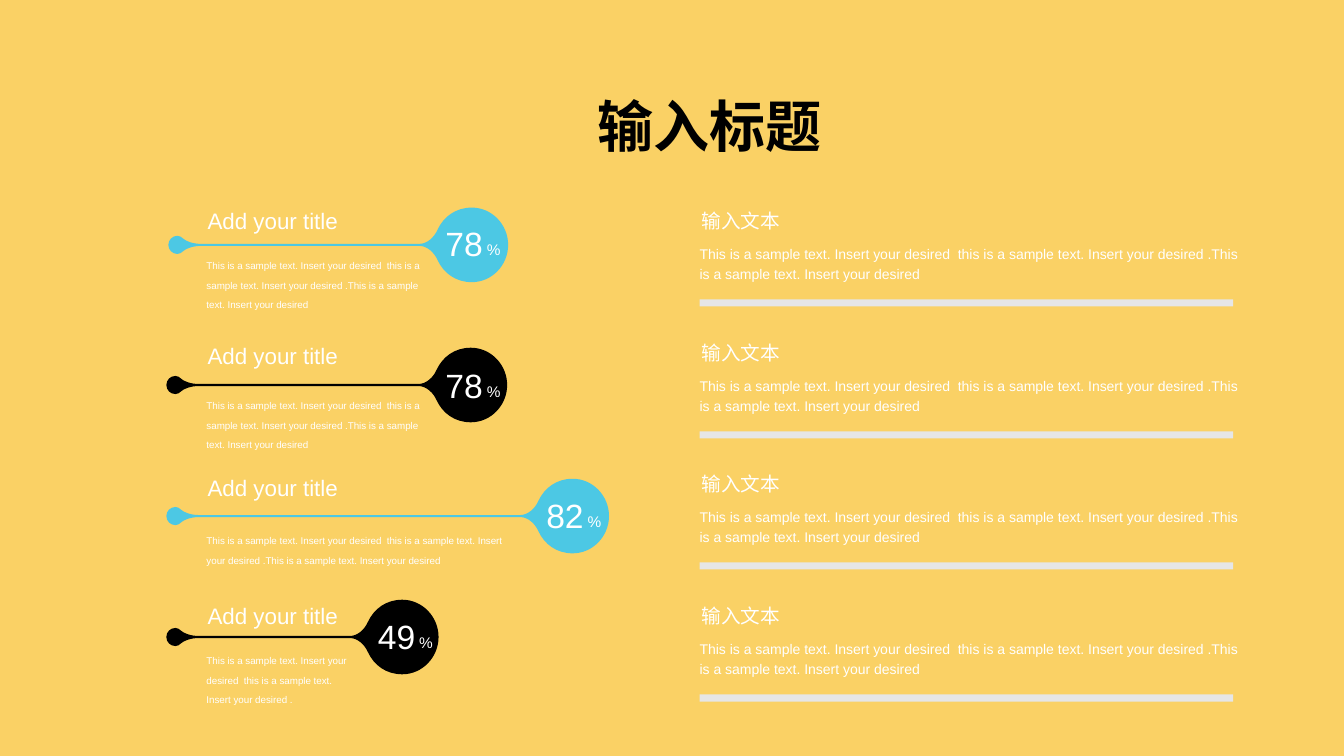
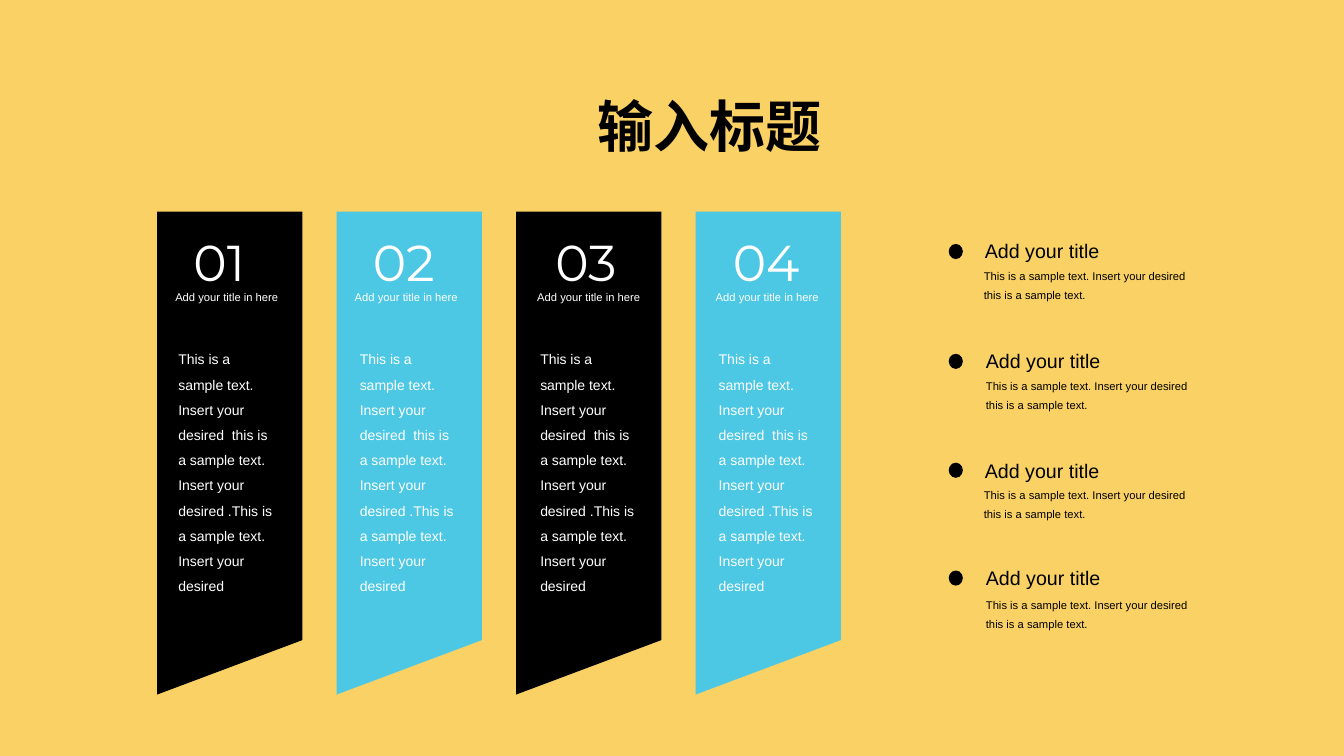
from lxml.etree import SubElement
from pptx import Presentation
from pptx.dml.color import RGBColor
from pptx.enum.shapes import MSO_SHAPE as Shape
from pptx.enum.text import MSO_ANCHOR as Anchor, MSO_AUTO_SIZE as Auto, PP_ALIGN as Align
from pptx.oxml.ns import qn
from pptx.util import Inches, Pt

GOLD = RGBColor(0xFA, 0xD1, 0x65)
BLUE = RGBColor(0x4C, 0xC8, 0xE4)
BLACK = RGBColor(0, 0, 0)
WHITE = RGBColor(255, 255, 255)
GREY = RGBColor(0xE6, 0xE6, 0xE6)
HEAD = "Add your title"
SHORT = "This is a sample text. Insert your desired  this is a sample text."
MID = SHORT + " Insert your desired ."
LONG = MID + "This is a sample text. Insert your desired"


def paint(shape, color):
    shape.shadow.inherit = False
    shape.fill.solid()
    shape.fill.fore_color.rgb = color
    shape.line.fill.background()


def write(slide, box, text, size, color, lead=None, font="Arial", fill=None):
    place = [Inches(n) for n in box]
    if fill is None:
        shape = slide.shapes.add_textbox(*place)
    else:
        shape = slide.shapes.add_shape(Shape.RECTANGLE, *place)
        paint(shape, fill)
    frame = shape.text_frame
    frame.word_wrap = lead is not None
    frame.auto_size = Auto.SHAPE_TO_FIT_TEXT
    frame.vertical_anchor = Anchor.TOP
    para = frame.paragraphs[0]
    para.alignment = Align.LEFT
    if lead:
        para.line_spacing = Pt(lead)
    run = para.add_run()
    run.text = text
    run.font.name = font
    run.font.size = Pt(size)
    run.font.color.rgb = color


deck = Presentation()
deck.slide_width = Inches(13.33)
deck.slide_height = Inches(7.5)

slides = []
for _ in range(2):
    slide = deck.slides.add_slide(deck.slide_layouts[5])
    back = slide.shapes.add_shape(
        Shape.RECTANGLE, 0, 0, deck.slide_width, deck.slide_height)
    paint(back, GOLD)
    back.line.color.rgb = GOLD
    back.line.width = Pt(1)
    title = slide.shapes.title
    back._element.addnext(title._element)
    title.left, title.top = Inches(5.83), Inches(1.04)
    title.width, title.height = Inches(4.39), Inches(1.22)
    frame = title.text_frame
    frame.word_wrap = True
    frame.auto_size = Auto.NONE
    frame.vertical_anchor = Anchor.TOP
    para = frame.paragraphs[0]
    para.alignment = Align.LEFT
    para.line_spacing = 0.7
    run = para.add_run()
    run.text = "输入标题"
    run.font.size = Pt(40)
    run.font.bold = True
    run.font.color.rgb = BLACK
    run.font.name = "Noto Sans CJK SC"
    SubElement(run.font._element, qn("a:ea"), typeface="Noto Sans CJK SC")
    slides.append(slide)
pins, cards = slides

bulb = [(0, 0), (0, 0.2), (-0.16, 0.37), (-0.36, 0.37),
        (-0.52, 0.37), (-0.64, 0.28), (-0.7, 0.15),
        (-0.73, 0.08), (-0.8, 0.01), (-0.88, 0.01)]
tail = [(0.32, 0.01), (0.32, 0.01), (0.32, 0.01),
        (0.24, 0.01), (0.17, 0.04), (0.15, 0.06),
        (0.13, 0.08), (0.11, 0.09), (0.09, 0.09),
        (0.04, 0.09), (0, 0.05), (0, 0)]
rows = [
    (BLUE, 1.67, 5.04, 2.43, 2.01, (2.45, 2.4, 0.69), 4.32, 2.16, "78", LONG),
    (BLACK, 1.65, 5.03, 3.82, 3.35, (3.84, 2.4, 0.69), 4.32, 3.57, "78", LONG),
    (BLUE, 1.65, 6.04, 5.12, 4.65, (5.18, 3.23, 0.49), 5.32, 4.86, "82", LONG),
    (BLACK, 1.65, 4.35, 6.32, 5.92, (6.37, 1.66, 0.69), 3.65, 6.06, "49", MID),
]
for color, left, right, mid, top, low, x, y, num, text in rows:
    edge = [(right + a, b) for a, b in bulb] + [(left + a, b) for a, b in tail]
    ring = [(a, mid - b) for a, b in edge] + [(a, mid + b) for a, b in edge[-2::-1]]
    ring = [(Inches(a), Inches(b)) for a, b in ring]
    pen = pins.shapes.build_freeform(*ring[0])
    pen.add_line_segments(ring[1:], close=False)
    pin = pen.convert_to_shape()
    paint(pin, color)
    legs = list(pin._element.iter(qn("a:lnTo")))
    track = legs[0].getparent()
    for first in range(0, len(legs), 3):
        curve = SubElement(track, qn("a:cubicBezTo"))
        for leg in legs[first:first + 3]:
            curve.append(leg[0])
            track.remove(leg)
    SubElement(track, qn("a:close"))
    write(pins, (1.96, top, 1.51, 0.37), HEAD, 16, WHITE)
    write(pins, (1.95, *low), text, 7, WHITE, 14)
    write(pins, (x, y, 0.58, 0.5), num, 24, WHITE)
    write(pins, (x + 0.41, y + 0.17, 0.34, 0.29), "%", 11, WHITE)

for top in (2.02, 3.33, 4.63, 5.94):
    write(pins, (6.86, top, 0.99, 0.34), "输入文本", 14, WHITE)
    write(pins, (6.84, top + 0.34, 5.55, 0.49), LONG, 10, WHITE, 14)
    bar = pins.shapes.add_shape(
        Shape.RECTANGLE, Inches(6.94), Inches(top + 0.95), Inches(5.29), Inches(0.07))
    paint(bar, GREY)

inner = [(1.82, 1.64, 1.67), (3.6, 3.42, 3.47), (5.41, 5.23, 5.26), (7.17, 7, 7.03)]
for col, (big, sub, body) in enumerate(inner):
    color = (BLACK, BLUE)[col % 2]
    left = 1.56 + 1.78 * col
    right = left + 1.44
    ring = [(right, 6.35), (left, 6.89), (left, 2.1), (right, 2.1)]
    ring = [(Inches(a), Inches(b)) for a, b in ring]
    pen = cards.shapes.build_freeform(*ring[0])
    pen.add_line_segments(ring[1:], close=True)
    paint(pen.convert_to_shape(), color)
    write(cards, (big, 2.24, 0.88, 0.71), f"0{col + 1}", 36, WHITE,
          font="Montserrat", fill=color)
    write(cards, (sub, 2.83, 1.24, 0.24), "Add your title in here", 8, WHITE, fill=color)
    write(cards, (body, 3.35, 1.19, 2.63), LONG, 10, WHITE, 18, fill=color)

notes = [(9.67, 9.66, 2.42, 2.32, 2.56), (9.68, 9.68, 3.51, 3.41, 3.65),
         (9.67, 9.66, 4.59, 4.5, 4.73), (9.68, 9.68, 5.66, 5.57, 5.82)]
for left, start, spot, top, low in notes:
    dot = cards.shapes.add_shape(
        Shape.OVAL, Inches(9.41), Inches(spot), Inches(0.14), Inches(0.15))
    paint(dot, BLACK)
    write(cards, (left, top, 1.34, 0.34), HEAD, 14, BLACK)
    write(cards, (start, low, 2.31, 0.49), SHORT, 8, BLACK, 14)

deck.save("out.pptx")
